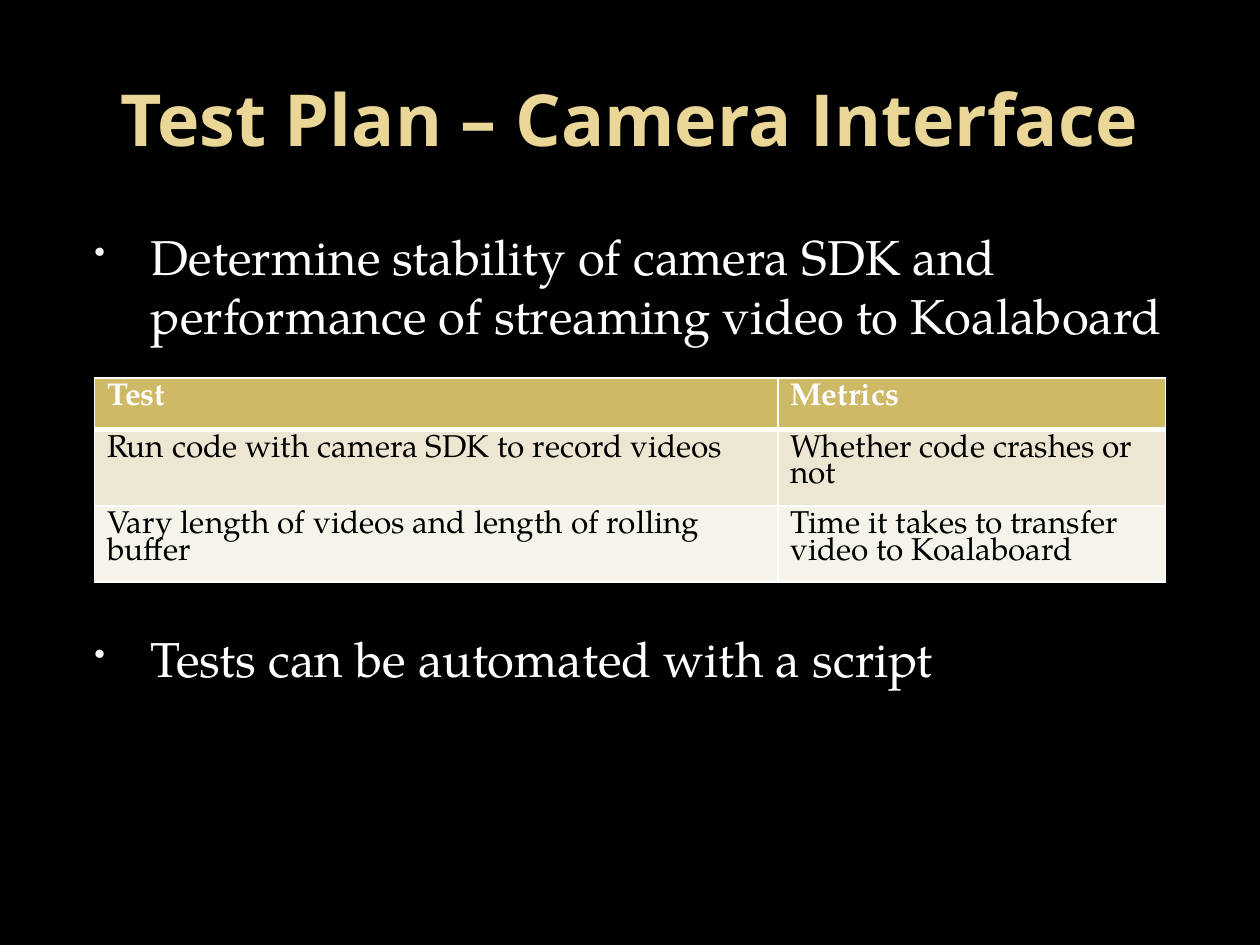
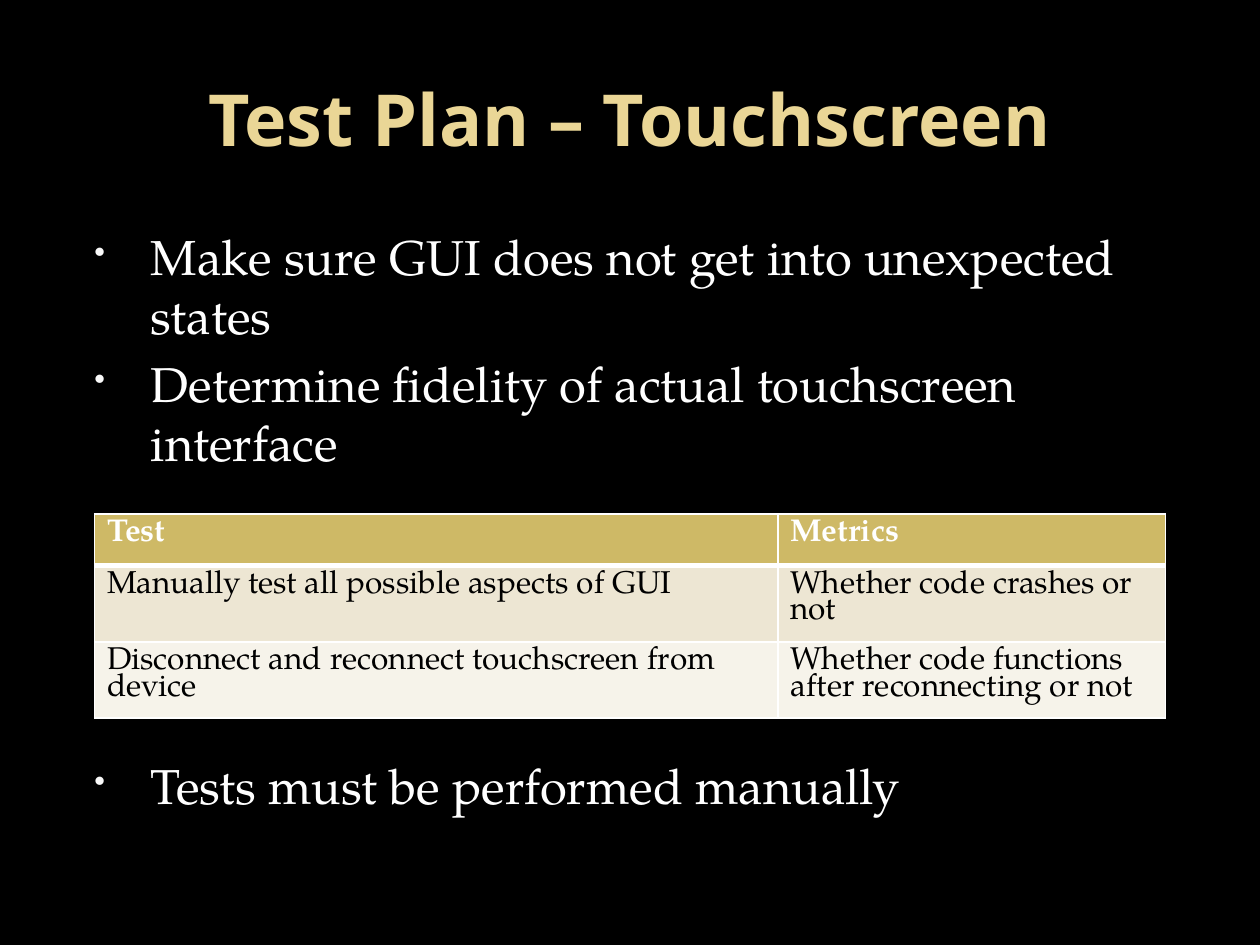
from dataclasses import dataclass

from lxml import etree
from pptx import Presentation
from pptx.dml.color import RGBColor
from pptx.enum import text
from pptx.oxml import ns
from pptx.util import Emu, Inches, Pt

HEADING_FONT, BODY_FONT = "Open Sans", "TeX Gyre Pagella"
BLACK, WHITE, GOLD, BULLET = "000000", "FFFFFF", "EAD696", "F9F9F9"
HEADER_FILL, ROW_FILLS = "CEB966", ("EDE6D3", "F6F3EA")
BULLET_SIZE, BULLET_GAP = 28, 5.6
TABLE_GAP = 162.4  # space before the bullet below the table, in points
COLUMN_SHARES = (0.638, 0.362)
ROW_HEIGHT = 0.41


@dataclass
class Box:
    left: int
    top: int
    width: int
    height: int

    def region(self, left, top, width, height):
        """Return the box that covers the given shares of this one."""
        return Box(Emu(int(self.left + left * self.width)),
                   Emu(int(self.top + top * self.height)),
                   Emu(int(width * self.width)), Emu(int(height * self.height)))

    def place(self):
        return self.left, self.top, self.width, self.height


def color(value):
    return RGBColor.from_string(value)


def add_span(para, words, font, size, shade, bold=False):
    span = para.add_run()
    span.text = words
    span.font.name, span.font.size, span.font.bold = font, Pt(size), bold
    span.font.color.rgb = color(shade)


def add_frame(page, box, anchor):
    frame = page.shapes.add_textbox(*box.place()).text_frame
    frame.word_wrap = True
    frame.vertical_anchor = anchor
    return frame


def add_element(parent, tag, **attributes):
    return etree.SubElement(parent, ns.qn(tag), attributes)


def add_title(page, box, words):
    para = add_frame(page, box, text.MSO_ANCHOR.MIDDLE).paragraphs[0]
    para.alignment = text.PP_ALIGN.CENTER
    add_span(para, words, HEADING_FONT, 41, GOLD, bold=True)


def set_bullet(para):
    props = para._p.get_or_add_pPr()
    props.set("marL", str(Inches(0.6)))
    props.set("indent", str(Inches(-0.45)))
    shade = add_element(props, "a:buClr")
    add_element(shade, "a:srgbClr", val=BULLET)
    add_element(props, "a:buSzPct", val="65000")
    add_element(props, "a:buChar", char="•")


def add_bullets(page, box, goals, closing):
    frame = add_frame(page, box, text.MSO_ANCHOR.TOP)
    for index, words in enumerate([*goals, closing]):
        para = frame.paragraphs[0] if index == 0 else frame.add_paragraph()
        para.space_before = Pt(TABLE_GAP if words == closing else BULLET_GAP)
        set_bullet(para)
        add_span(para, words, BODY_FONT, BULLET_SIZE, WHITE)


def set_borders(cell, bottom, top):
    props = cell._tc.get_or_add_tcPr()
    widths = {"a:lnL": 1, "a:lnR": 1, "a:lnT": top, "a:lnB": bottom}
    for index, (tag, width) in enumerate(widths.items()):
        line = etree.Element(ns.qn(tag), w=str(Pt(width)))
        fill = add_element(line, "a:solidFill")
        add_element(fill, "a:srgbClr", val=WHITE)
        props.insert(index, line)  # borders come before the fill


def add_tests(page, box, tests):
    rows = [("Test", "Metrics"), *tests]
    table = page.shapes.add_table(len(rows), len(COLUMN_SHARES), *box.place()).table
    for column, share in zip(table.columns, COLUMN_SHARES):
        column.width = Emu(int(box.width * share))
    for row_index, row in enumerate(rows):
        header = row_index == 0
        table.rows[row_index].height = Inches(ROW_HEIGHT)
        for column_index, words in enumerate(row):
            cell = table.cell(row_index, column_index)
            cell.fill.solid()
            cell.fill.fore_color.rgb = color(
                HEADER_FILL if header else ROW_FILLS[(row_index - 1) % 2])
            set_borders(cell, bottom=3 if header else 1, top=3 if row_index == 1 else 1)
            para = cell.text_frame.paragraphs[0]
            para.line_spacing = 0.84
            add_span(para, words, BODY_FONT, 18, WHITE if header else BLACK, header)


def add_plan(deck, title, goals, tests, closing, table_top):
    page = deck.slides.add_slide(deck.slide_layouts[6])
    page.background.fill.solid()
    page.background.fill.fore_color.rgb = color(BLACK)
    whole = Box(0, 0, deck.slide_width, deck.slide_height)
    add_title(page, whole.region(0.05, 0.04, 0.9, 0.17), title)
    add_bullets(page, whole.region(0.05, 0.233, 0.9, 0.687), goals, closing)
    add_tests(page, whole.region(0.075, table_top, 0.85, 0.164), tests)


def main():
    deck = Presentation()
    deck.slide_width, deck.slide_height = Inches(10), Inches(7.5)
    add_plan(
        deck, "Test Plan – Camera Interface",
        ["Determine stability of camera SDK and performance of "
         "streaming video to Koalaboard"],
        [("Run code with camera SDK to record videos", "Whether code crashes or not"),
         ("Vary length of videos and length of rolling buffer",
          "Time it takes to transfer video to Koalaboard")],
        "Tests can be automated with a script", table_top=0.4)
    add_plan(
        deck, "Test Plan – Touchscreen",
        ["Make sure GUI does not get into unexpected states",
         "Determine fidelity of actual touchscreen interface"],
        [("Manually test all possible aspects of GUI", "Whether code crashes or not"),
         ("Disconnect and reconnect touchscreen from device",
          "Whether code functions after reconnecting or not")],
        "Tests must be performed manually", table_top=0.544)
    deck.save("out.pptx")


if __name__ == "__main__":
    main()
